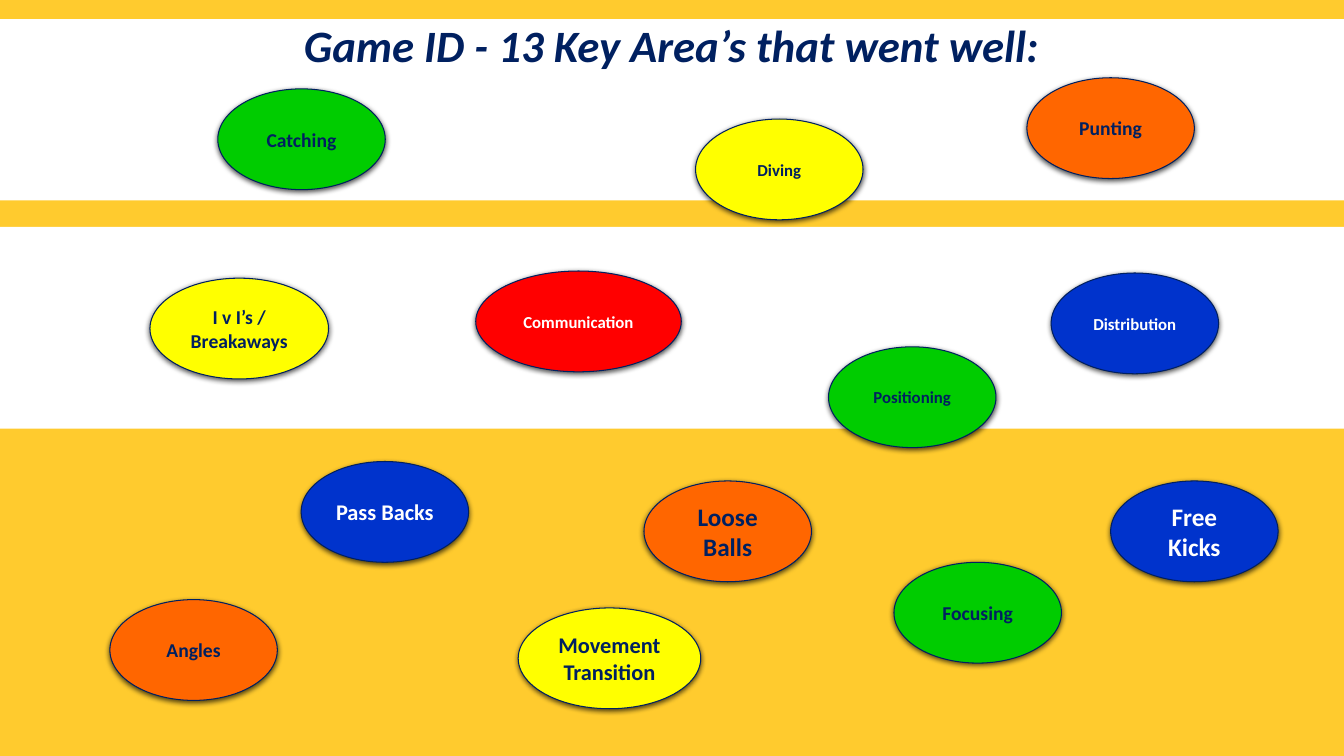
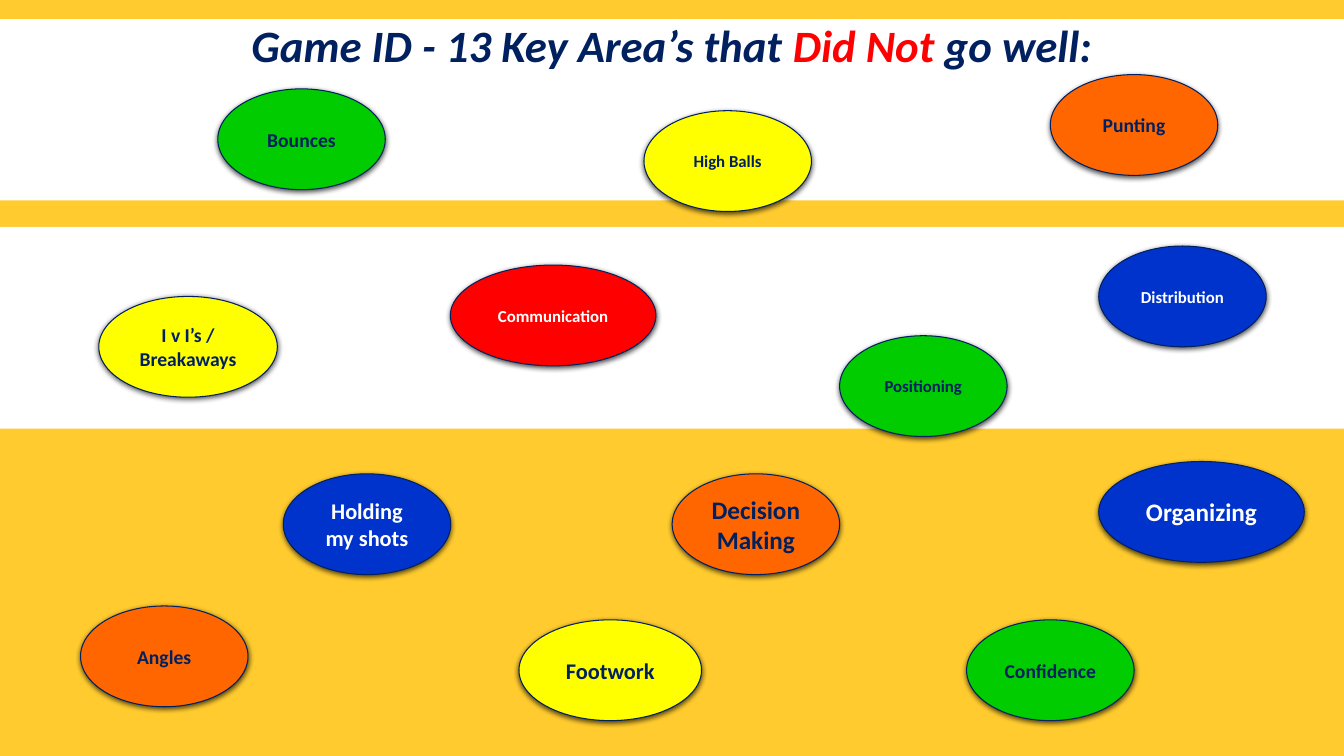
from typing import NamedTuple

from lxml.etree import SubElement
from pptx import Presentation
from pptx.dml.color import RGBColor
from pptx.enum.shapes import MSO_SHAPE
from pptx.enum.text import MSO_ANCHOR, PP_ALIGN
from pptx.oxml.ns import qn
from pptx.util import Cm, Pt

GOLD = RGBColor(0xFF, 0xCB, 0x2E)
WHITE = RGBColor(0xFF, 0xFF, 0xFF)
NAVY = RGBColor(0x00, 0x20, 0x60)
RED = RGBColor(0xFF, 0x00, 0x00)
YELLOW = RGBColor(0xFF, 0xFF, 0x00)
GREEN = RGBColor(0x00, 0xCC, 0x00)
ORANGE = RGBColor(0xFF, 0x66, 0x00)
BLUE = RGBColor(0x00, 0x33, 0xCC)

FONT = "Calibri"
SLIDE_WIDTH, SLIDE_HEIGHT = 33.87, 19.05
BANDS = [(0.48, 4.57), (5.72, 5.08)]
OVAL_HEIGHT = 2.54
STANDARD, MEDIUM, BROAD, WIDE = 4.22, 4.5, 4.6, 5.18


class Area(NamedTuple):
    text: str
    left: float
    top: float
    fill: RGBColor
    size: int
    width: float = STANDARD


WENT_WELL_TITLE = [("Game ID - 13 Key Area’s that went well:", NAVY)]
WENT_WELL = [
    Area("Communication", 11.99, 6.83, RED, 12, WIDE),
    Area("I v I’s / Breakaways", 3.78, 7.01, YELLOW, 14, MEDIUM),
    Area("Catching", 5.49, 2.24, GREEN, 14),
    Area("Loose Balls", 16.23, 12.12, ORANGE, 18),
    Area("Free Kicks", 27.99, 12.12, BLUE, 18),
    Area("Movement Transition", 13.06, 15.32, YELLOW, 16, BROAD),
    Area("Pass Backs", 7.59, 11.63, BLUE, 16),
    Area("Diving", 17.53, 3, YELLOW, 12),
    Area("Distribution", 26.49, 6.88, BLUE, 12),
    Area("Angles", 2.77, 15.11, ORANGE, 14),
    Area("Focusing", 22.53, 14.17, GREEN, 14),
    Area("Positioning", 20.88, 8.74, GREEN, 12),
    Area("Punting", 25.88, 1.96, ORANGE, 14),
]

DID_NOT_TITLE = [
    ("Game ID - 13 Key Area’s that ", NAVY),
    ("Did Not ", RED),
    ("go well:", NAVY),
]
DID_NOT_GO_WELL = [
    Area("Communication", 11.35, 6.68, RED, 12, WIDE),
    Area("I v I’s / Breakaways", 2.49, 7.47, YELLOW, 14, MEDIUM),
    Area("Bounces", 5.49, 2.24, GREEN, 14),
    Area("Decision Making", 16.94, 11.94, ORANGE, 18),
    Area("Organizing", 27.69, 11.63, BLUE, 18, WIDE),
    Area("Footwork", 13.08, 15.62, YELLOW, 16, BROAD),
    Area("Holding my shots", 7.14, 11.94, BLUE, 16),
    Area("High Balls", 16.23, 2.79, YELLOW, 12),
    Area("Distribution", 27.69, 6.2, BLUE, 12),
    Area("Angles", 2.03, 15.27, ORANGE, 14),
    Area("Confidence", 24.36, 15.62, GREEN, 14),
    Area("Positioning", 21.16, 8.46, GREEN, 12),
    Area("Punting", 26.47, 1.88, ORANGE, 14),
]


def add_filled_shape(slide, kind, left, top, width, height, color):
    shape = slide.shapes.add_shape(kind, Cm(left), Cm(top), Cm(width), Cm(height))
    shape.shadow.inherit = False
    shape.fill.solid()
    shape.fill.fore_color.rgb = color
    return shape


def style_master(presentation, slide):
    master = presentation.slide_master
    master.background.fill.solid()
    master.background.fill.fore_color.rgb = GOLD
    for position, (top, height) in enumerate(BANDS, start=2):
        band = add_filled_shape(
            slide, MSO_SHAPE.RECTANGLE, 0, top, SLIDE_WIDTH, height, WHITE
        )
        band.line.fill.background()
        master.shapes.element.insert(position, band.element)


def add_shadow(shape):
    effects = shape.element.spPr.find(qn("a:effectLst"))
    shadow = SubElement(
        effects,
        qn("a:outerShdw"),
        blurRad=str(Pt(4)),
        dist=str(Pt(1.2)),
        dir="5400000",
        rotWithShape="0",
    )
    color = SubElement(shadow, qn("a:srgbClr"), val="000000")
    SubElement(color, qn("a:alpha"), val="68000")


def add_title(slide, parts):
    box = slide.shapes.add_textbox(Cm(4.88), Cm(0.33), Cm(24.1), Cm(3.94))
    box.text_frame.word_wrap = True
    paragraph = box.text_frame.paragraphs[0]
    paragraph.alignment = PP_ALIGN.CENTER
    paragraph.font.name = FONT
    paragraph.font.size = Pt(32)
    paragraph.font.bold = True
    paragraph.font.italic = True
    for text, color in parts:
        run = paragraph.add_run()
        run.text = text
        run.font.color.rgb = color


def add_area(slide, area):
    oval = add_filled_shape(
        slide, MSO_SHAPE.OVAL, area.left, area.top, area.width, OVAL_HEIGHT, area.fill
    )
    oval.line.color.rgb = NAVY
    oval.line.width = Pt(0.75)
    add_shadow(oval)
    frame = oval.text_frame
    frame.word_wrap = True
    frame.vertical_anchor = MSO_ANCHOR.MIDDLE
    paragraph = frame.paragraphs[0]
    paragraph.text = area.text
    paragraph.alignment = PP_ALIGN.CENTER
    paragraph.font.name = FONT
    paragraph.font.size = Pt(area.size)
    paragraph.font.bold = True
    paragraph.font.color.rgb = WHITE if area.fill in (RED, BLUE) else NAVY


def main():
    presentation = Presentation()
    presentation.slide_width = Cm(SLIDE_WIDTH)
    presentation.slide_height = Cm(SLIDE_HEIGHT)
    blank = presentation.slide_layouts[6]
    went_well = presentation.slides.add_slide(blank)
    did_not = presentation.slides.add_slide(blank)
    style_master(presentation, went_well)
    for slide, title, areas in (
        (went_well, WENT_WELL_TITLE, WENT_WELL),
        (did_not, DID_NOT_TITLE, DID_NOT_GO_WELL),
    ):
        add_title(slide, title)
        for area in areas:
            add_area(slide, area)
    presentation.save("out.pptx")


if __name__ == "__main__":
    main()
